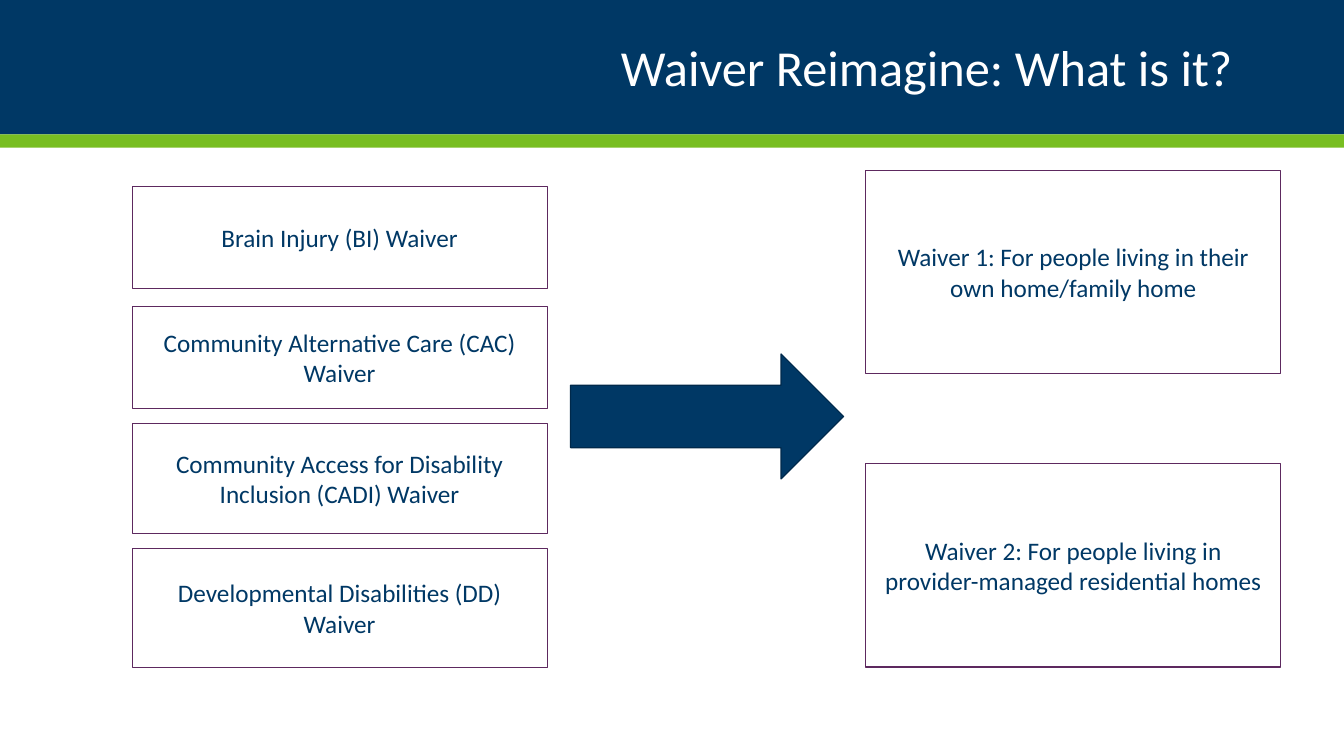
from pptx import Presentation
from pptx.dml.color import RGBColor
from pptx.enum.shapes import MSO_SHAPE
from pptx.enum.text import MSO_ANCHOR, PP_ALIGN
from pptx.util import Cm, Pt

NAVY, GREEN, PURPLE, WHITE = "003865", "78BE21", "5D295F", "FFFFFF"
SLIDE_WIDTH = 33.87
BOX_WIDTH = 10.46
CURRENT_LEFT, FUTURE_LEFT = 3.33, 21.82


def add_filled(kind, left, top, width, height, fill, line=None):
    """Add a shadowless preset shape, sized in centimetres."""
    shape = slide.shapes.add_shape(kind, Cm(left), Cm(top), Cm(width), Cm(height))
    shape.shadow.inherit = False
    shape.fill.solid()
    shape.fill.fore_color.rgb = RGBColor.from_string(fill)
    if line:
        shape.line.color.rgb = RGBColor.from_string(line)
        shape.line.width = Pt(0.85)
    else:
        shape.line.fill.background()
    return shape


def write(shape, text, size, color, align):
    frame = shape.text_frame
    frame.word_wrap = True
    frame.vertical_anchor = MSO_ANCHOR.MIDDLE
    frame.text = text
    paragraph = frame.paragraphs[0]
    paragraph.alignment = align
    font = paragraph.runs[0].font
    font.name = "Calibri"
    font.size = Pt(size)
    font.color.rgb = RGBColor.from_string(color)


prs = Presentation()
prs.slide_width, prs.slide_height = Cm(SLIDE_WIDTH), Cm(19.05)
slide = prs.slides.add_slide(prs.slide_layouts[6])

# Header
add_filled(MSO_SHAPE.RECTANGLE, 0, 0, SLIDE_WIDTH, 3.39, NAVY)
add_filled(MSO_SHAPE.RECTANGLE, 0, 3.39, SLIDE_WIDTH, 0.33, GREEN)
title = slide.shapes.add_textbox(Cm(2.54), Cm(0.51), Cm(28.78), Cm(2.54))
write(title, "Waiver Reimagine: What is it?", 36, WHITE, PP_ALIGN.RIGHT)
title.text_frame.paragraphs[0].line_spacing = 0.9

# Four current waivers become two
waivers = [
    (CURRENT_LEFT, 4.7, 2.57, "Brain Injury (BI) Waiver"),
    (CURRENT_LEFT, 7.72, 2.57, "Community Alternative Care (CAC) Waiver"),
    (CURRENT_LEFT, 10.67, 2.77, "Community Access for Disability Inclusion (CADI) Waiver"),
    (CURRENT_LEFT, 13.82, 3, "Developmental Disabilities (DD) Waiver"),
    (FUTURE_LEFT, 4.29, 5.13, "Waiver 1: For people living in their own home/family home"),
    (FUTURE_LEFT, 11.68, 5.13, "Waiver 2: For people living in provider-managed residential homes"),
]
for left, top, height, name in waivers:
    waiver = add_filled(MSO_SHAPE.RECTANGLE, left, top, BOX_WIDTH, height, WHITE, PURPLE)
    write(waiver, name, 18, NAVY, PP_ALIGN.CENTER)

add_filled(MSO_SHAPE.RIGHT_ARROW, 14.38, 8.92, 6.88, 3.15, NAVY, "00294B")

prs.save("out.pptx")
